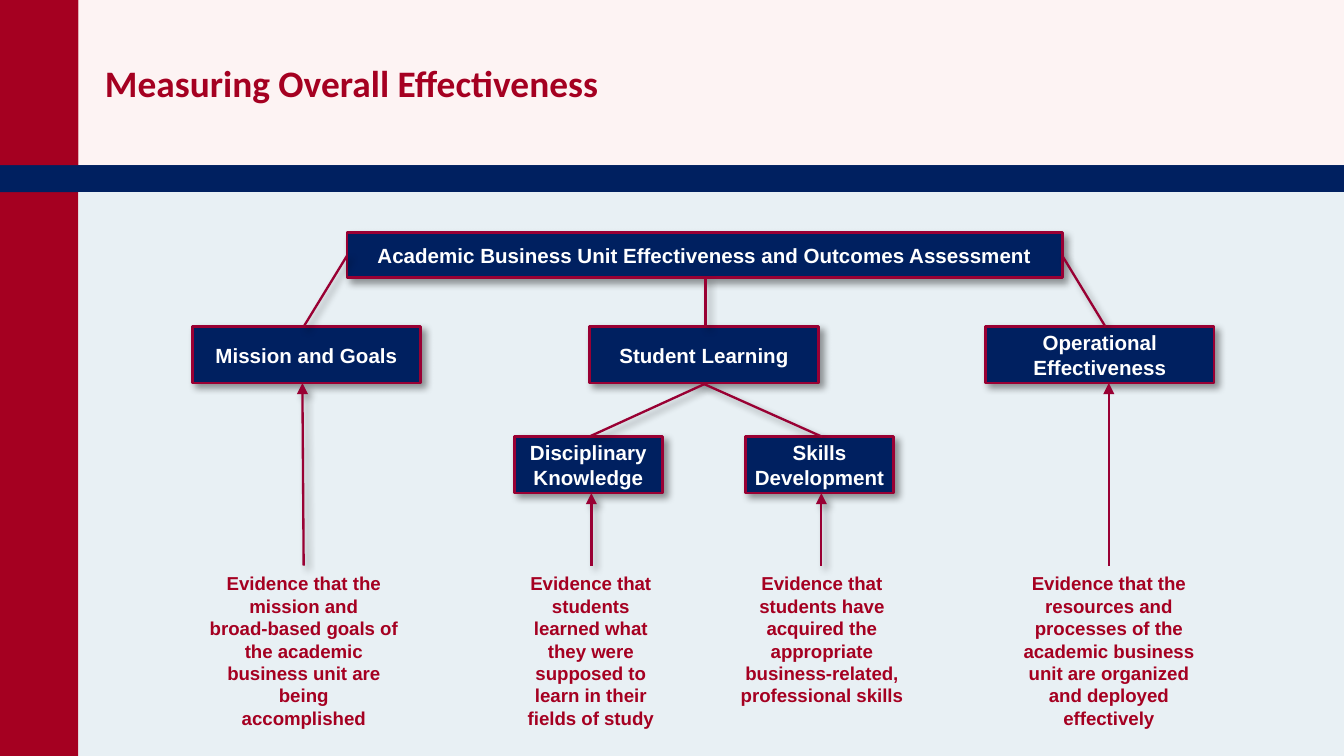
"""Build the slide on measuring overall effectiveness."""
import pptx
import pptx.dml.color
import pptx.enum.shapes
import pptx.enum.text
import pptx.oxml
import pptx.oxml.ns
import pptx.util
from lxml import etree

Pt = pptx.util.Pt
RGBColor = pptx.dml.color.RGBColor
PP_ALIGN = pptx.enum.text.PP_ALIGN
MSO_ANCHOR = pptx.enum.text.MSO_ANCHOR
qn = pptx.oxml.ns.qn

CRIMSON = RGBColor(0xA5, 0x00, 0x21)
MAROON = RGBColor(0x99, 0x00, 0x33)
NAVY = RGBColor(0x00, 0x20, 0x60)
BLUSH = RGBColor(0xFA, 0xD2, 0xD3)
MIST = RGBColor(0xE8, 0xF0, 0xF4)
WHITE = RGBColor(0xFF, 0xFF, 0xFF)

WIDTH, HEIGHT = 720, 405
RAIL_WIDTH = 42
BAND_TOP, BAND_BOTTOM = 88.5, 103
BOX_HEIGHT = 30.2
PILLAR_TOP, SKILL_TOP = 175, 234
PILLAR_BOTTOM, SKILL_BOTTOM = PILLAR_TOP + BOX_HEIGHT, SKILL_TOP + BOX_HEIGHT
PILLAR_WIDTH, SKILL_WIDTH = 122.4, 79.2
EVIDENCE_TOP, EVIDENCE_HEIGHT = 303, 91.5


class EffectivenessSlide:
    """Hold the style and the current slide, and draw each kind of element."""

    def __init__(self, slide, font="Arial", title_font="Calibri"):
        self.slide = slide
        self.font = font
        self.title_font = title_font

    def set_text(self, frame, text, size, color, font, align=PP_ALIGN.CENTER):
        frame.word_wrap = True
        frame.text = text
        for paragraph in frame.paragraphs:
            paragraph.alignment = align
            for run in paragraph.runs:
                run.font.name = font
                run.font.size = Pt(size)
                run.font.bold = True
                run.font.color.rgb = color

    def inset(self, frame, left=0):
        frame.margin_left = Pt(left)
        frame.margin_right = frame.margin_top = frame.margin_bottom = Pt(0)
        frame.vertical_anchor = MSO_ANCHOR.MIDDLE

    def cast_shadow(self, element):
        effects = element.spPr.find(qn("a:effectLst"))
        shadow = etree.SubElement(effects, qn("a:outerShdw"), blurRad=str(Pt(4)),
                                  dist=str(Pt(3)), dir="2700000", algn="tl", rotWithShape="0")
        black = etree.SubElement(shadow, qn("a:srgbClr"), val="000000")
        etree.SubElement(black, qn("a:alpha"), val="40000")

    def panel(self, left, top, width, height, color, opacity=100):
        area = self.slide.shapes.add_shape(
            pptx.enum.shapes.MSO_SHAPE.RECTANGLE, Pt(left), Pt(top), Pt(width), Pt(height))
        area.shadow.inherit = False
        area.fill.solid()
        area.fill.fore_color.rgb = color
        area.line.fill.background()
        if opacity < 100:
            tint = area.element.spPr.find(qn("a:solidFill"))[0]
            etree.SubElement(tint, qn("a:alpha"), val=str(opacity * 1000))
        return area

    def box(self, text, left, top, width, height=BOX_HEIGHT):
        node = self.panel(left, top, width, height, NAVY)
        node.line.color.rgb = MAROON
        node.line.width = Pt(1.5)
        self.cast_shadow(node.element)
        self.inset(node.text_frame)
        self.set_text(node.text_frame, text, 11, WHITE, self.font)

    def link(self, start, end, arrow=False, shadow=True):
        branch = self.slide.shapes.add_connector(
            pptx.enum.shapes.MSO_CONNECTOR.STRAIGHT, *map(Pt, start + end))
        branch.line.color.rgb = MAROON
        branch.line.width = Pt(1.25)
        properties = branch.element.spPr
        if arrow:
            etree.SubElement(properties.find(qn("a:ln")), qn("a:tailEnd"), type="triangle")
        etree.SubElement(properties, qn("a:effectLst"))
        if shadow:
            self.cast_shadow(branch.element)

    def evidence(self, text, left, width):
        note = self.slide.shapes.add_textbox(
            Pt(left), Pt(EVIDENCE_TOP), Pt(width), Pt(EVIDENCE_HEIGHT))
        self.set_text(note.text_frame, text, 10, CRIMSON, self.font)

    def title(self, text):
        heading = self.slide.shapes.title
        heading.left, heading.top = Pt(0), Pt(0)
        heading.width, heading.height = Pt(WIDTH), Pt(BAND_TOP)
        self.inset(heading.text_frame, left=56.2)
        self.set_text(heading.text_frame, text, 20, CRIMSON, self.title_font, PP_ALIGN.LEFT)
        self.slide.shapes.element.append(heading.element)


def main():
    deck = pptx.Presentation()
    deck.slide_width, deck.slide_height = Pt(WIDTH), Pt(HEIGHT)
    page = EffectivenessSlide(deck.slides.add_slide(deck.slide_layouts[5]))

    page.panel(0, BAND_BOTTOM, RAIL_WIDTH, HEIGHT - BAND_BOTTOM, CRIMSON)
    page.panel(0, BAND_TOP, WIDTH, BAND_BOTTOM - BAND_TOP, NAVY)
    page.panel(0, 0, RAIL_WIDTH, BAND_TOP, CRIMSON)
    page.panel(RAIL_WIDTH, 0, WIDTH - RAIL_WIDTH, BAND_TOP, BLUSH, opacity=25)
    page.panel(RAIL_WIDTH, BAND_BOTTOM, WIDTH - RAIL_WIDTH, HEIGHT - BAND_BOTTOM, MIST)

    page.box("Academic Business Unit Effectiveness and Outcomes Assessment",
             185.9, 124.5, 383.2, 24.3)
    for pillar, left in (("Mission and Goals", 103), ("Student Learning", 316),
                         ("Operational\nEffectiveness", 528)):
        page.box(pillar, left, PILLAR_TOP, PILLAR_WIDTH)
    for skill, left in (("Disciplinary Knowledge", 275.6), ("Skills\nDevelopment", 399.5)):
        page.box(skill, left, SKILL_TOP, SKILL_WIDTH)

    for start, end in (
        ((185.9, 137), (162.7, PILLAR_TOP)),
        ((569.1, 137), (592.2, PILLAR_TOP)),
        ((378, PILLAR_TOP), (378, 148.8)),
        ((377.3, 205.8), (315.5, SKILL_TOP)),
        ((377.3, 205.8), (440.5, SKILL_TOP)),
    ):
        page.link(start, end)
    for foot, tip, tip_top, shadow in (
        (162.7, 162, PILLAR_BOTTOM, True),
        (316.8, 316.8, SKILL_BOTTOM, True),
        (440, 440, SKILL_BOTTOM, True),
        (594, 594, PILLAR_BOTTOM, False),
    ):
        page.link((foot, EVIDENCE_TOP), (tip, tip_top), arrow=True, shadow=shadow)

    for proof, left, width in (
        ("Evidence that the\nmission and\nbroad-based goals of the academic business unit "
         "are being\naccomplished", 101.5, 122.4),
        ("Evidence that students learned what they were supposed to learn in their "
         "fields of study", 270, 92.9),
        ("Evidence that students have acquired the appropriate business-related, "
         "professional skills", 383, 114.5),
        ("Evidence that the\nresources and processes of the academic business unit "
         "are organized and deployed effectively", 540, 108),
    ):
        page.evidence(proof, left, width)

    page.title("Measuring Overall Effectiveness")
    deck.save("out.pptx")


if __name__ == "__main__":
    main()
